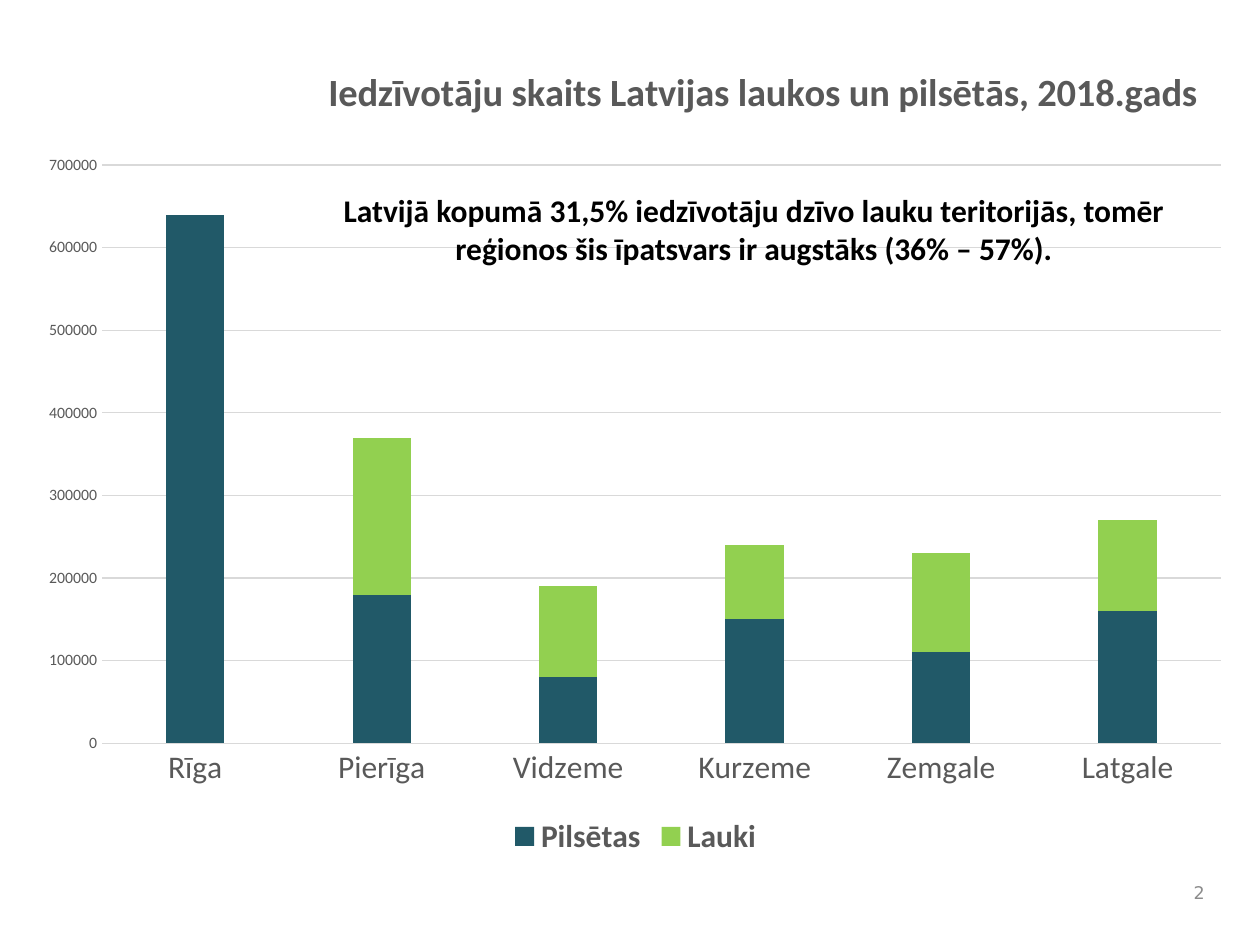
from dataclasses import dataclass

from lxml import etree
from pptx import Presentation
from pptx import util as u
from pptx.chart.data import CategoryChartData
from pptx.dml.color import RGBColor
from pptx.enum import chart as ch, text
from pptx.oxml.ns import qn


@dataclass(frozen=True)
class Theme:
    font: str = "Calibri"
    number_font: str = "DejaVu Sans"
    black: str = "000000"
    label: str = "595959"
    muted: str = "8C8C8C"
    rule: str = "D9D9D9"
    urban: str = "215968"
    rural: str = "92D050"
    title_size: float = 22
    body_size: float = 18
    tick_size: float = 9
    number_size: float = 10


def style_font(font, size, color, name, bold=False):
    font.size, font.name, font.bold = u.Pt(size), name, bold
    font.color.rgb = RGBColor.from_string(color)


def style_line(line, color):
    line.color.rgb = RGBColor.from_string(color)
    line.width = u.Pt(0.75)


def set_layout(parent, index, chart_size, place, **modes):
    """Place a chart part, given in inches from the chart's corner."""
    for old in parent.findall(qn("c:layout")):
        parent.remove(old)
    layout = etree.Element(qn("c:layout"))
    manual = etree.SubElement(layout, qn("c:manualLayout"))
    for tag, mode in modes.items():
        etree.SubElement(manual, qn(f"c:{tag}"), val=mode)
    for tag, length, whole in zip("xywh", place, chart_size * 2):
        etree.SubElement(manual, qn(f"c:{tag}"), val=str(length / whole))
    parent.insert(index, layout)


class SlideBuilder:
    def __init__(self, slide, theme):
        self.slide, self.theme = slide, theme

    def text_box(self, box, words, size, color, font, align, bold=False):
        frame = self.slide.shapes.add_textbox(*map(u.Inches, box)).text_frame
        frame.word_wrap = True
        frame.vertical_anchor = text.MSO_ANCHOR.MIDDLE
        paragraph = frame.paragraphs[0]
        paragraph.text = words
        paragraph.alignment = align
        style_font(paragraph.runs[0].font, size, color, font, bold)
        return frame

    def stacked_columns(self, box, title, categories, series):
        t = self.theme
        data = CategoryChartData(number_format="0")
        data.categories = categories
        for name, values, _ in series:
            data.add_series(name, values)
        chart = self.slide.shapes.add_chart(
            ch.XL_CHART_TYPE.COLUMN_STACKED, *map(u.Inches, box), data).chart
        style_font(chart.font, t.number_size, t.black, t.font)

        # Title and plot area
        chart.has_title = True
        heading = chart.chart_title
        heading.text_frame.text = title
        style_font(heading.text_frame.paragraphs[0].runs[0].font,
                   t.title_size, t.label, t.font, True)
        heading.include_in_layout = False
        set_layout(heading._element, 1, box[2:], (2.35, 0.1),
                   xMode="edge", yMode="edge")
        set_layout(chart._chartSpace.chart.plotArea, 0, box[2:],
                   (0.61, 0.95, 8.88, 4.59),
                   layoutTarget="inner", xMode="edge", yMode="edge")

        # Columns
        plot = chart.plots[0]
        plot.gap_width, plot.overlap = 219, 100
        plot.vary_by_categories = False
        for column, (_, _, color) in zip(plot.series, series):
            column.format.fill.solid()
            column.format.fill.fore_color.rgb = RGBColor.from_string(color)

        # Axes
        regions, people = chart.category_axis, chart.value_axis
        for axis, size in ((regions, t.body_size), (people, t.tick_size)):
            axis.major_tick_mark = axis.minor_tick_mark = ch.XL_TICK_MARK.NONE
            style_font(axis.tick_labels.font, size, t.label, t.font)
        style_line(regions.format.line, t.rule)
        people.format.line.fill.background()
        people.minimum_scale, people.maximum_scale = 0, 700000
        people.major_unit = 100000
        people.has_major_gridlines = True
        style_line(people.major_gridlines.format.line, t.rule)
        people.tick_labels.number_format = "0"
        people.tick_labels.number_format_is_linked = False

        # Legend
        chart.has_legend = True
        chart.legend.position = ch.XL_LEGEND_POSITION.BOTTOM
        chart.legend.include_in_layout = False
        style_font(chart.legend.font, t.body_size, t.label, t.font, True)


def main():
    theme = Theme()
    deck = Presentation()
    deck.slide_width, deck.slide_height = u.Inches(10), u.Inches(7.5)
    builder = SlideBuilder(deck.slides.add_slide(deck.slide_layouts[6]), theme)

    # Slide number
    builder.text_box((9.33, 6.92, 0.33, 0.33), "2", theme.number_size,
                     theme.muted, theme.number_font, text.PP_ALIGN.RIGHT)

    # Population by region
    builder.stacked_columns(
        (0.2, 0.36, 9.69, 6.48),
        "Iedzīvotāju skaits Latvijas laukos un pilsētās, 2018.gads",
        ["Rīga", "Pierīga", "Vidzeme", "Kurzeme", "Zemgale", "Latgale"],
        [("Pilsētas", [640000, 180000, 80000, 150000, 110000, 160000], theme.urban),
         ("Lauki", [None, 190000, 110000, 90000, 120000, 110000], theme.rural)])

    # Key message
    message = builder.text_box(
        (2.56, 1.47, 6.85, 0.71),
        "Latvijā kopumā 31,5% iedzīvotāju dzīvo lauku teritorijās, "
        "tomēr reģionos šis īpatsvars ir augstāks (36% – 57%).",
        theme.body_size, theme.black, theme.font, text.PP_ALIGN.CENTER, bold=True)
    message.vertical_anchor = text.MSO_ANCHOR.TOP
    message.auto_size = text.MSO_AUTO_SIZE.SHAPE_TO_FIT_TEXT

    deck.save("out.pptx")


if __name__ == "__main__":
    main()
